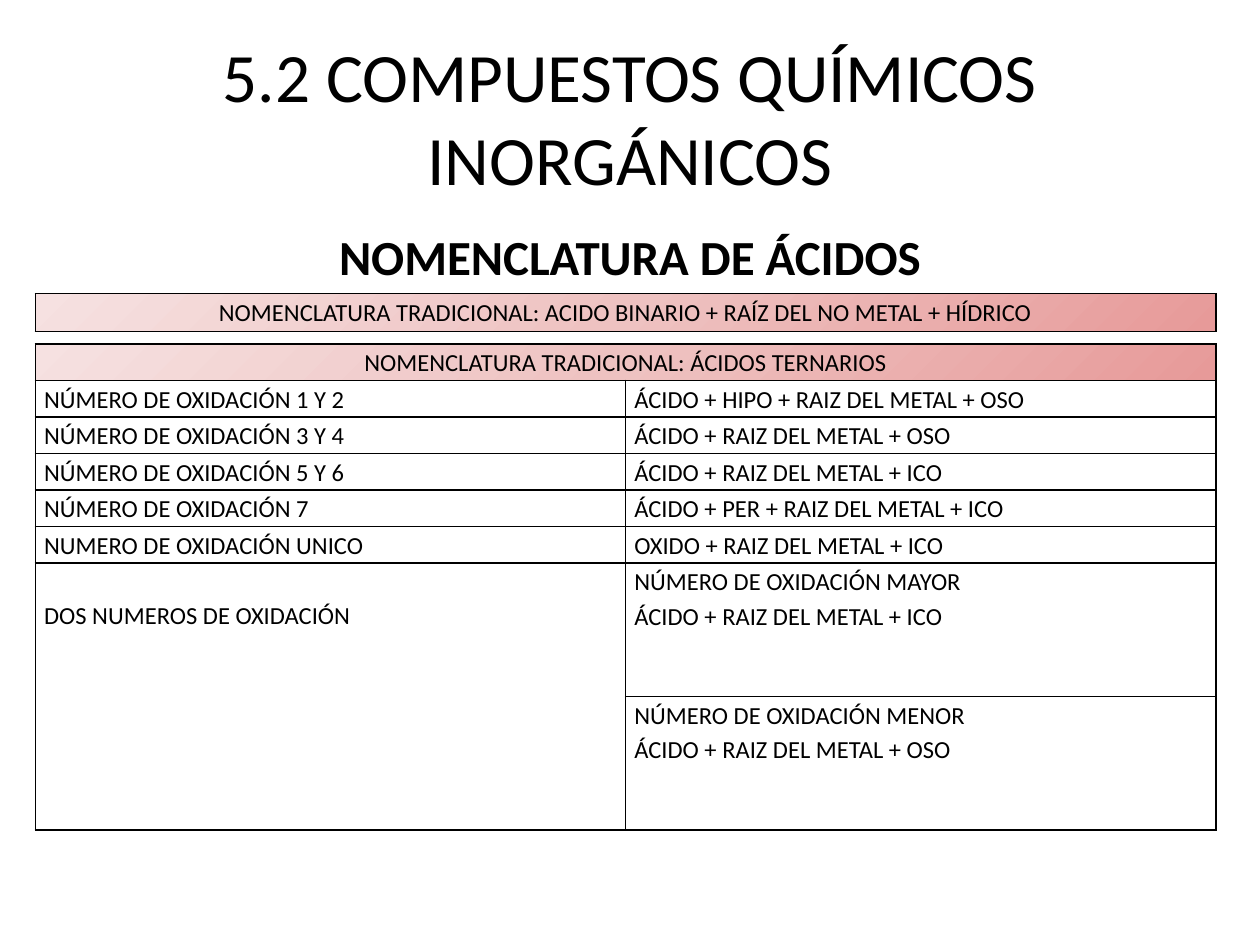
from lxml import etree
from pptx import Presentation
from pptx.dml.color import RGBColor
from pptx.enum.text import MSO_ANCHOR as ANCHOR, PP_ALIGN as ALIGN
from pptx.oxml import parse_xml
from pptx.oxml.ns import nsdecls, qn
from pptx.util import Inches, Pt

BLACK = "000000"
STOPS = [(0, "E79A99"), (50, "EEC2C1"), (100, "F6E1E1")]
LEFT, WIDTH = 0.28, 9.37


def write(tf, lines, size, align=ALIGN.LEFT, bold=False, spacing=None):
    for i, line in enumerate(lines):
        p = tf.paragraphs[0] if i == 0 else tf.add_paragraph()
        p.alignment = align
        p.line_spacing = spacing
        r = p.add_run()
        r.text = line
        r.font.name = "Calibri"
        r.font.size = Pt(size)
        r.font.bold = bold
        r.font.color.rgb = RGBColor.from_string(BLACK)


def fill_cell(cell, lines, header=False):
    """Write the lines and give the cell black borders; a header gets the gradient."""
    cell.margin_left = cell.margin_right = Inches(0.07)
    cell.margin_top = cell.margin_bottom = 0
    write(cell.text_frame, lines, 14, ALIGN.CENTER if header else ALIGN.LEFT, spacing=1.15)
    tc_pr = cell._tc.get_or_add_tcPr()
    for side in ("lnL", "lnR", "lnT", "lnB"):
        ln = etree.SubElement(tc_pr, qn("a:" + side), w=str(Pt(1)))
        solid = etree.SubElement(ln, qn("a:solidFill"))
        etree.SubElement(solid, qn("a:srgbClr"), val=BLACK)
    if header:
        stops = "".join(f'<a:gs pos="{pos * 1000}"><a:srgbClr val="{color}"/></a:gs>'
                        for pos, color in STOPS)
        tc_pr.append(parse_xml(
            f'<a:gradFill {nsdecls("a")} rotWithShape="1"><a:gsLst>{stops}</a:gsLst>'
            f'<a:lin ang="{225 * 60000}" scaled="0"/></a:gradFill>'))
    else:
        cell.fill.background()


prs = Presentation()
prs.slide_width, prs.slide_height = Inches(10), Inches(7.5)
s = prs.slides.add_slide(prs.slide_layouts[6])

# Title and subtitle
for text, top, height, size, bold, anchor in [
    ("5.2 COMPUESTOS QUÍMICOS INORGÁNICOS", 0.3, 1.25, 39.6, False, ANCHOR.MIDDLE),
    ("NOMENCLATURA DE ÁCIDOS", 1.75, 0.55, 28, True, ANCHOR.TOP),
]:
    tf = s.shapes.add_textbox(Inches(0.5), Inches(top), Inches(9), Inches(height)).text_frame
    tf.word_wrap = True
    tf.vertical_anchor = anchor
    write(tf, [text], size, ALIGN.CENTER, bold)

# Tables
tables = []
for top, heights, columns in [(2.33, [0.3], 1), (2.73, [0.29] * 6 + [1.06] * 2, 2)]:
    table = s.shapes.add_table(len(heights), columns, Inches(LEFT), Inches(top),
                               Inches(WIDTH), Inches(sum(heights))).table
    table.first_row = table.horz_banding = False
    for row, height in zip(table.rows, heights):
        row.height = Inches(height)
    tables.append(table)
binary, ternary = tables

fill_cell(binary.cell(0, 0),
          ["NOMENCLATURA TRADICIONAL: ACIDO BINARIO + RAÍZ DEL NO METAL + HÍDRICO"], True)

ternary.cell(0, 0).merge(ternary.cell(0, 1))
ternary.cell(6, 0).merge(ternary.cell(7, 0))
rules = [
    (["NÚMERO DE OXIDACIÓN 1 Y 2"], ["ÁCIDO + HIPO + RAIZ DEL METAL + OSO"]),
    (["NÚMERO DE OXIDACIÓN 3 Y 4"], ["ÁCIDO + RAIZ DEL METAL + OSO"]),
    (["NÚMERO DE OXIDACIÓN 5 Y 6"], ["ÁCIDO + RAIZ DEL METAL + ICO"]),
    (["NÚMERO DE OXIDACIÓN 7"], ["ÁCIDO + PER + RAIZ DEL METAL + ICO"]),
    (["NUMERO DE OXIDACIÓN UNICO"], ["OXIDO + RAIZ DEL METAL + ICO"]),
    (["DOS NUMEROS DE OXIDACIÓN"],
     ["NÚMERO DE OXIDACIÓN MAYOR", "ÁCIDO + RAIZ DEL METAL + ICO"]),
    ([], ["NÚMERO DE OXIDACIÓN MENOR", "ÁCIDO + RAIZ DEL METAL + OSO"]),
]
fill_cell(ternary.cell(0, 0), ["NOMENCLATURA TRADICIONAL: ÁCIDOS TERNARIOS"], True)
fill_cell(ternary.cell(0, 1), [], True)
for i, rule in enumerate(rules, start=1):
    for j, lines in enumerate(rule):
        fill_cell(ternary.cell(i, j), lines)
ternary.cell(6, 0).margin_top = Inches(0.27)

prs.save("out.pptx")
